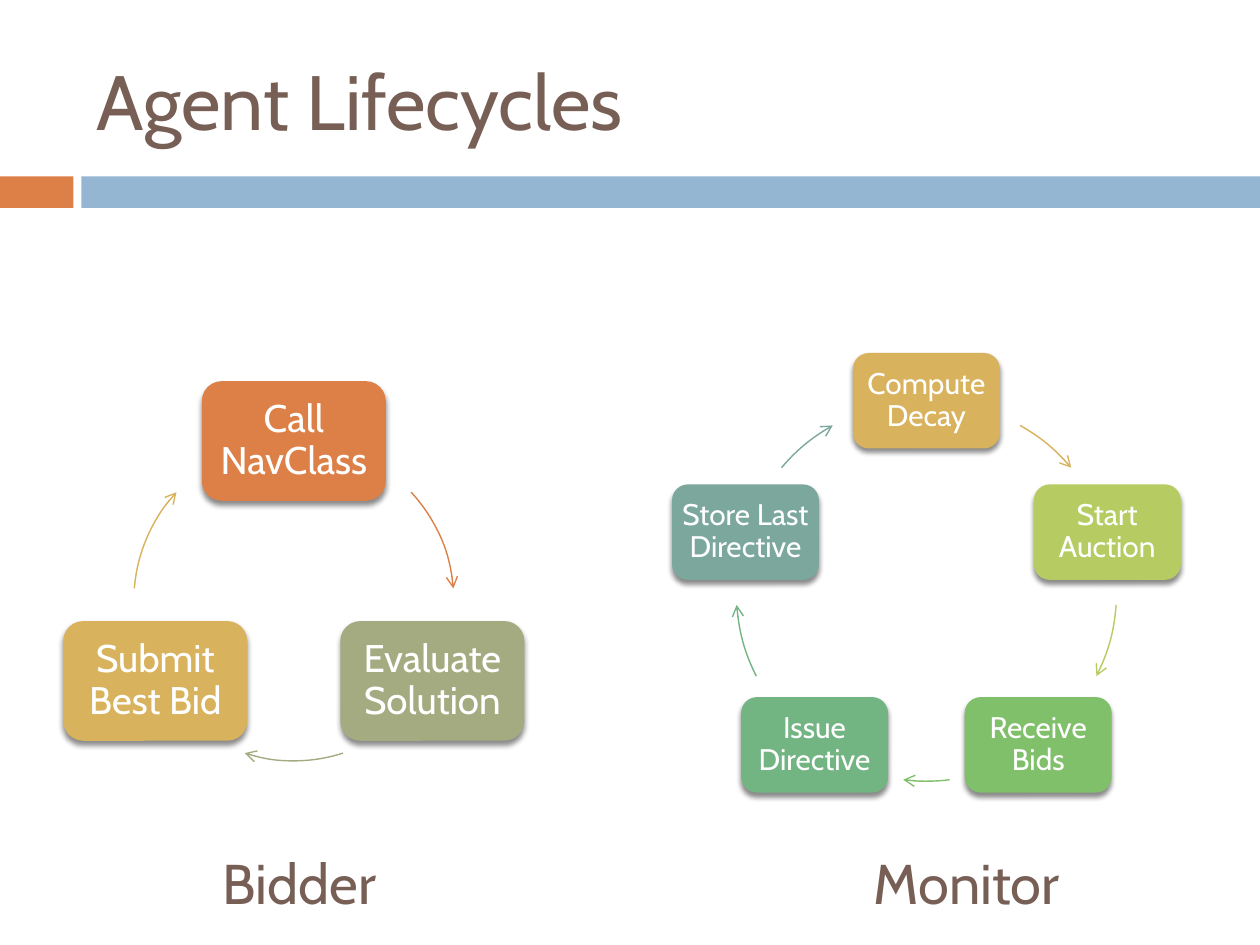
from math import cos, radians, sin

from lxml.etree import SubElement
from pptx import Presentation
from pptx.dml.color import RGBColor
from pptx.enum.shapes import MSO_SHAPE
from pptx.enum.text import MSO_ANCHOR, PP_ALIGN
from pptx.oxml.ns import qn
from pptx.util import Pt

FONT = "Cabin"
BROWN, ORANGE, BLUE, GOLD = "775F55", "DD8047", "94B6D2", "D8B25C"


def color(value):
    return RGBColor.from_string(value)


class Deck:
    """Style and current slide; all lengths in points."""

    def __init__(self, prs):
        self.slide = prs.slides.add_slide(prs.slide_layouts[6])

    def shape(self, kind, x, y, w, h, fill=None):
        sp = self.slide.shapes.add_shape(kind, Pt(x), Pt(y), Pt(w), Pt(h))
        sp.shadow.inherit = False
        if fill:
            sp.fill.solid()
            sp.fill.fore_color.rgb = color(fill)
            sp.line.fill.background()
        else:
            sp.fill.background()
        return sp

    def set_text(self, tf, text, size, ink):
        tf.word_wrap = True
        tf.vertical_anchor = MSO_ANCHOR.MIDDLE
        tf.text = text
        font = tf.paragraphs[0].runs[0].font
        font.name, font.size = FONT, Pt(size)
        font.color.rgb = color(ink)

    def label(self, text, x, y, w, h, size):
        box = self.slide.shapes.add_textbox(Pt(x), Pt(y), Pt(w), Pt(h))
        self.set_text(box.text_frame, text, size, BROWN)

    def node(self, text, x, y, w, h, size, fill):
        sp = self.shape(MSO_SHAPE.ROUNDED_RECTANGLE, x, y, w, h, fill)
        effects = sp._element.spPr.find(qn("a:effectLst"))
        shadow = SubElement(effects, qn("a:outerShdw"), blurRad=str(Pt(3)),
                            dist=str(Pt(2.4)), dir="5400000", rotWithShape="0")
        rgb = SubElement(shadow, qn("a:srgbClr"), val="000000")
        SubElement(rgb, qn("a:alpha"), val="45000")
        tf = sp.text_frame
        tf.margin_left = tf.margin_right = tf.margin_top = tf.margin_bottom = Pt(2)
        self.set_text(tf, text, size, "FFFFFF")
        p = tf.paragraphs[0]
        p.alignment = PP_ALIGN.CENTER
        p.line_spacing = 0.9

    def arrow(self, cx, cy, radius, start, end, ink):
        sp = self.shape(MSO_SHAPE.ARC, cx - radius, cy - radius, 2 * radius, 2 * radius)
        # Adjustments count 100000 units, angles 60000 per degree
        sp.adjustments[0] = start % 360 * 0.6
        sp.adjustments[1] = end % 360 * 0.6
        sp.line.color.rgb = color(ink)
        sp.line.width = Pt(0.79)
        SubElement(sp._element.spPr.find(qn("a:ln")), qn("a:tailEnd"), type="arrow")

    def cycle(self, cx, cy, radius, w, h, size, steps):
        """Nodes evenly spaced clockwise from the top, each with an arc to the next."""
        for i, (text, fill, start, end) in enumerate(steps):
            angle = radians(360 * i / len(steps) - 90)
            x, y = cx + radius * cos(angle), cy + radius * sin(angle)
            self.node(text, x - w / 2, y - h / 2, w, h, size, fill)
            self.arrow(cx, cy, radius, start, end, fill)


# Text, colour, arc start and end in degrees clockwise from the right
MONITOR = [
    ("Compute Decay", GOLD, -60.5, -40.4),
    ("Start Auction", "B6CC63", 4.2, 26.6),
    ("Receive Bids", "81C06B", 83, 97),
    ("Issue Directive", "73B483", 153.4, 175.8),
    ("Store Last Directive", "7BA79D", 220.4, 240.5),
]
BIDDER = [
    ("Call NavClass", ORANGE, -42.8, -4.5),
    ("Evaluate Solution", "A5AB81", 72.1, 107.9),
    ("Submit Best Bid", GOLD, 184.5, 222.8),
]


def main():
    prs = Presentation()
    prs.slide_width, prs.slide_height = Pt(720), Pt(540)
    deck = Deck(prs)

    # Title and band
    deck.shape(MSO_SHAPE.RECTANGLE, 0, 100.8, 42, 18, ORANGE)
    deck.shape(MSO_SHAPE.RECTANGLE, 46.5, 100.8, 673.5, 18, BLUE)
    deck.label("Agent Lifecycles", 48, 18, 642, 78, 44)

    # Lifecycles
    deck.cycle(529.4, 337.7, 108.7, 84, 54.6, 17, MONITOR)
    deck.cycle(167.9, 343.4, 91.4, 105.2, 68.4, 22, BIDDER)

    # Captions
    deck.label("Bidder", 120, 468, 114, 72, 32)
    deck.label("Monitor", 492, 468, 156, 72, 32)

    prs.save("out.pptx")


if __name__ == "__main__":
    main()
